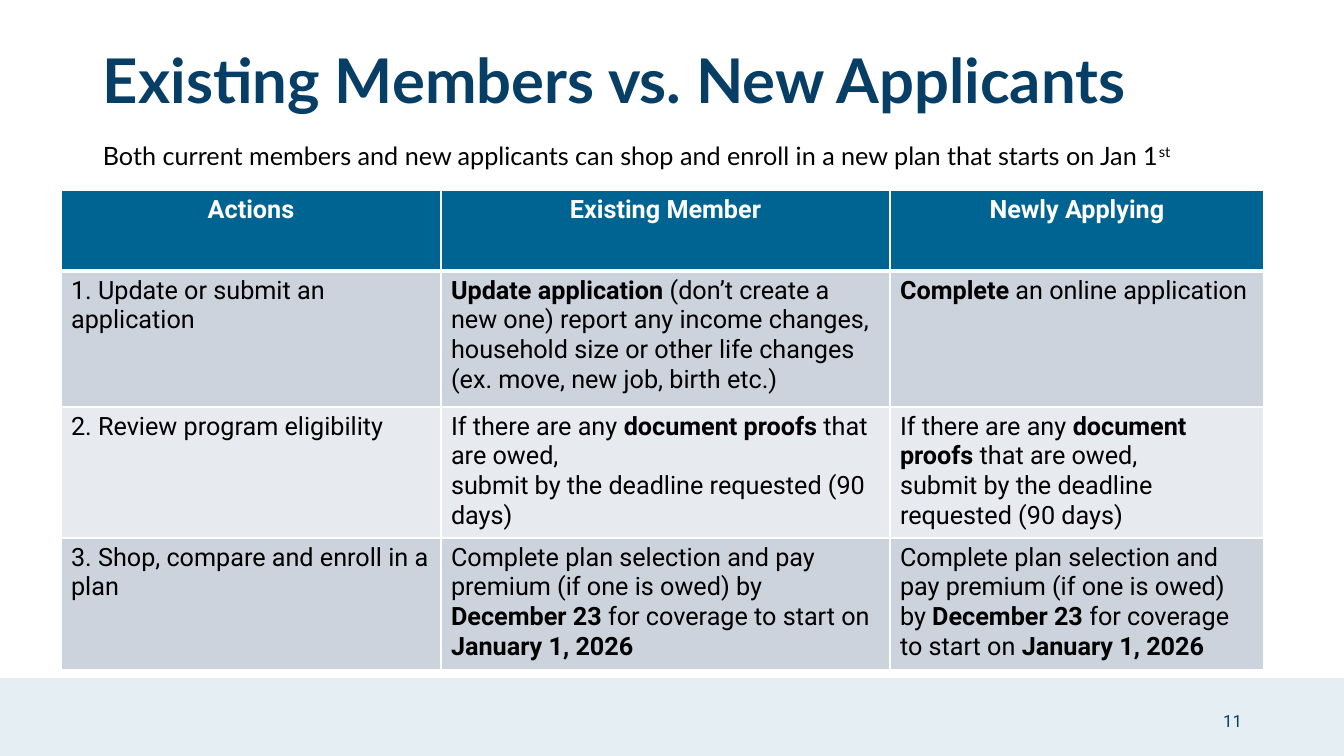
import pptx
import pptx.util
import pptx.dml.color
import pptx.enum.shapes
import pptx.enum.text
import pptx.oxml
import pptx.oxml.ns
from lxml import etree

RGB = pptx.dml.color.RGBColor
NAVY = RGB(0x06, 0x3E, 0x66)
TEAL = RGB(0x00, 0x64, 0x93)
DARK_BAND = RGB(0xCC, 0xD3, 0xDC)
LIGHT_BAND = RGB(0xE7, 0xEA, 0xEE)
WHITE = RGB(0xFF, 0xFF, 0xFF)
BLACK = RGB(0x00, 0x00, 0x00)
ALIGN = pptx.enum.text.PP_ALIGN
ANCHOR = pptx.enum.text.MSO_ANCHOR

# Content: ** marks where bold starts and stops, \n is a line break
TITLE = "Existing Members vs. New Applicants"
SUBTITLE = "Both current members and new applicants can shop and enroll in a new plan that starts on Jan 1"
ORDINAL = "st"
PAGE_NUMBER = "11"
PROOFS = "If there are any **document proofs** that are owed,\nsubmit by the deadline requested (90 days)"
PAYMENT = ("Complete plan selection and pay premium (if one is owed) by "
           "**December 23** for coverage to start on **January 1, 2026**")
ROWS = [
    ["**Actions**", "**Existing Member**", "**Newly Applying**"],
    ["1. Update or submit an application",
     "**Update application** (don’t create a new one) report any income changes, "
     "household size or other life changes (ex. move, new job, birth etc.)",
     "**Complete** an online application"],
    ["2. Review program eligibility", PROOFS, PROOFS],
    ["3. Shop, compare and enroll in a plan", PAYMENT, PAYMENT],
]

# Layout in px
PAGE_WIDTH, PAGE_HEIGHT = 1344, 756
BAND_TOP = 678
TABLE_LEFT, TABLE_TOP = 61, 190
COLUMN_WIDTHS = [380, 449, 374]
ROW_HEIGHTS = [81, 136, 128, 128]


def px(length):
    return pptx.util.Emu(round(length * 914400 / 100.8))


def add_span(para, text, size, font, color, bold=False):
    span = para.add_run()
    span.text = text
    span.font.size = pptx.util.Pt(size)
    span.font.name = font
    span.font.color.rgb = color
    span.font.bold = bold
    return span


def add_box(page, left, top, width, height, anchor):
    box = page.shapes.add_textbox(px(left), px(top), px(width), px(height))
    box.text_frame.word_wrap = True
    box.text_frame.vertical_anchor = anchor
    return box.text_frame.paragraphs[0]


def add_marked_text(para, text, color):
    for index, part in enumerate(text.split("**")):
        for line_index, line in enumerate(part.split("\n")):
            if line_index:
                para.add_line_break()
            if line:
                add_span(para, line, 18, "Roboto", color, bold=index % 2 == 1)


def set_border(cell, side, points):
    line = etree.SubElement(cell._tc.get_or_add_tcPr(), pptx.oxml.ns.qn(f"a:ln{side}"),
                            w=str(pptx.util.Pt(points)))
    fill = etree.SubElement(line, pptx.oxml.ns.qn("a:solidFill"))
    etree.SubElement(fill, pptx.oxml.ns.qn("a:srgbClr"), val=str(WHITE))


def main():
    deck = pptx.Presentation()
    deck.slide_width, deck.slide_height = px(PAGE_WIDTH), px(PAGE_HEIGHT)
    page = deck.slides.add_slide(deck.slide_layouts[6])

    # Pale footer band
    band = page.shapes.add_shape(pptx.enum.shapes.MSO_SHAPE.RECTANGLE, 0, px(BAND_TOP),
                                 px(PAGE_WIDTH), px(PAGE_HEIGHT - BAND_TOP))
    band.shadow.inherit = False
    band.fill.solid()
    band.fill.fore_color.rgb = TEAL
    band.line.fill.background()
    tint = band._element.spPr.find(".//" + pptx.oxml.ns.qn("a:srgbClr"))
    etree.SubElement(tint, pptx.oxml.ns.qn("a:alpha"), val="10000")

    # Title
    para = add_box(page, 93, 45, 1159, 78, ANCHOR.MIDDLE)
    para.line_spacing = 0.9
    add_span(para, TITLE, 44, "Lato", NAVY, bold=True)

    # Comparison table
    table = page.shapes.add_table(len(ROWS), len(COLUMN_WIDTHS), px(TABLE_LEFT), px(TABLE_TOP),
                                  px(sum(COLUMN_WIDTHS)), px(sum(ROW_HEIGHTS))).table
    for column, width in zip(table.columns, COLUMN_WIDTHS):
        column.width = px(width)
    for r, (texts, height) in enumerate(zip(ROWS, ROW_HEIGHTS)):
        table.rows[r].height = px(height)
        row_fill = TEAL if r == 0 else DARK_BAND if r % 2 else LIGHT_BAND
        for c, text in enumerate(texts):
            cell = table.cell(r, c)
            for side in "LRTB":
                under_header = (r, side) in ((0, "B"), (1, "T"))
                set_border(cell, side, 3 if under_header else 1)
            cell.fill.solid()
            cell.fill.fore_color.rgb = row_fill
            para = cell.text_frame.paragraphs[0]
            para.alignment = ALIGN.LEFT if r else ALIGN.CENTER
            add_marked_text(para, text, BLACK if r else WHITE)

    # Subtitle with raised ordinal
    para = add_box(page, 93, 135, 1129, 40, ANCHOR.TOP)
    para.space_after = pptx.util.Pt(6)
    add_span(para, SUBTITLE, 18, "Lato", BLACK)
    ordinal = add_span(para, ORDINAL, 18, "Lato", BLACK)
    ordinal.font._element.set("baseline", "30000")

    # Page number
    para = add_box(page, 950, 701, 302, 40, ANCHOR.MIDDLE)
    para.alignment = ALIGN.RIGHT
    add_span(para, PAGE_NUMBER, 12, "Roboto", NAVY)

    deck.save("out.pptx")


if __name__ == "__main__":
    main()
